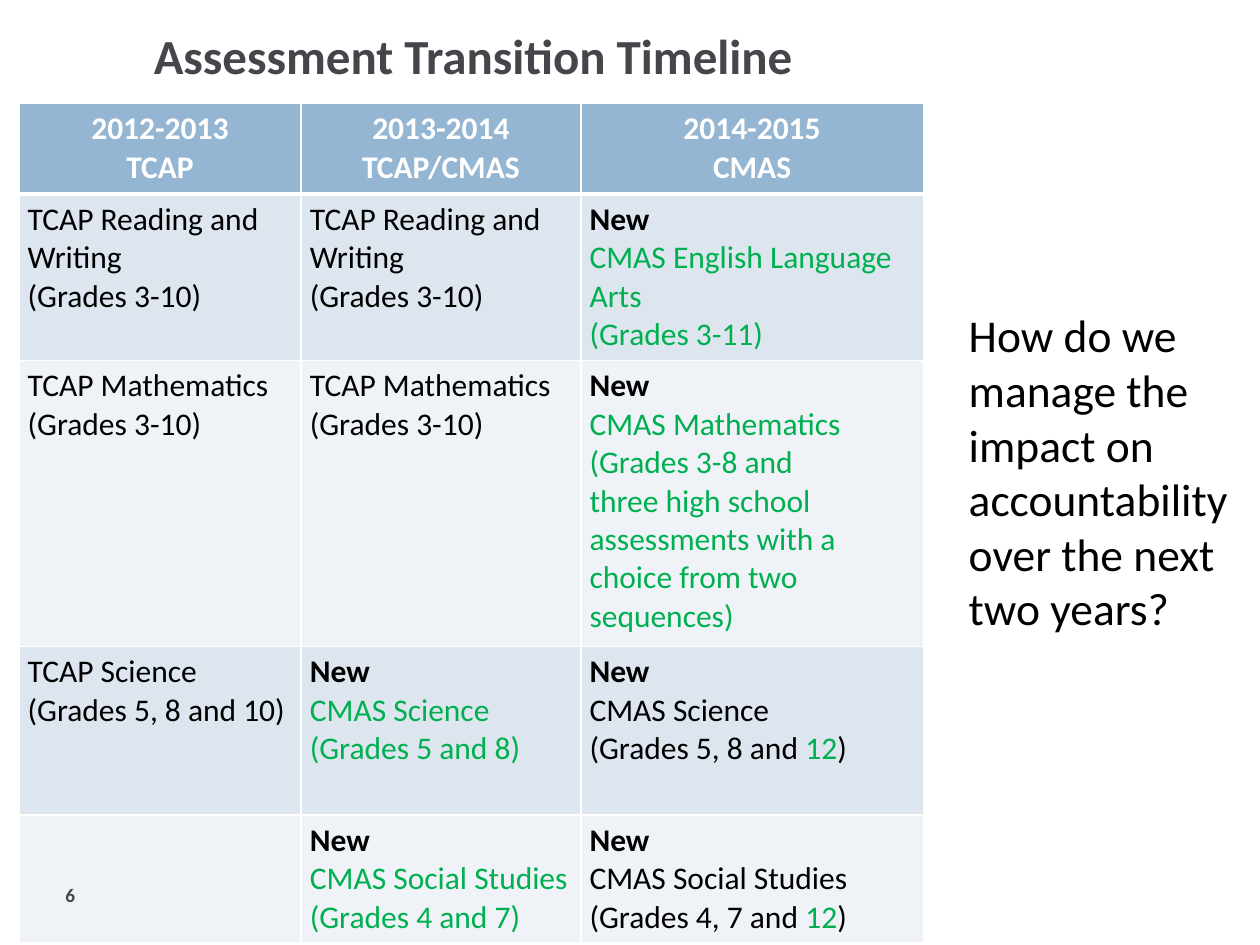
import pptx
import pptx.util
import pptx.dml.color
import pptx.enum.text
import pptx.oxml
import pptx.oxml.ns

ALIGN = pptx.enum.text.PP_ALIGN
ANCHOR = pptx.enum.text.MSO_ANCHOR
BLACK, WHITE, GREEN, CHARCOAL = "000000", "FFFFFF", "00B050", "45454C"
HEADER_FILL, BAND_FILLS = "95B6D2", ("DDE5EE", "EFF3F7")


def rgb(value):
    return pptx.dml.color.RGBColor.from_string(value)


def write(frame, lines, size=18, color=BLACK, bold=False, align=ALIGN.LEFT):
    frame.word_wrap = True
    for index, line in enumerate(lines):
        paragraph = frame.add_paragraph() if index else frame.paragraphs[0]
        paragraph.alignment = align
        pieces = [(line, {})] if isinstance(line, str) else line
        for words, changes in pieces:
            look = {"color": color, "bold": bold, **changes}
            run = paragraph.add_run()
            run.text = words
            run.font.name = "Calibri"
            run.font.size = pptx.util.Pt(size)
            run.font.bold = look["bold"]
            run.font.color.rgb = rgb(look["color"])


def new(*lines):
    return [[("New", {"bold": True})], *lines]


def green(*lines):
    return [[(line, {"color": GREEN})] for line in lines]


def grade_12(start):
    return [(start, {}), ("12", {"color": GREEN}), (")", {})]


class Deck:
    COLUMNS, ROWS = 100, 75

    def __init__(self, width, height):
        self.presentation = pptx.Presentation()
        self.presentation.slide_width = pptx.util.Inches(width)
        self.presentation.slide_height = pptx.util.Inches(height)
        self.slide = self.presentation.slides.add_slide(self.presentation.slide_layouts[6])

    def across(self, columns):
        return round(self.presentation.slide_width * columns / self.COLUMNS)

    def down(self, rows):
        return round(self.presentation.slide_height * rows / self.ROWS)

    def place(self, left, top, width, height):
        return self.across(left), self.down(top), self.across(width), self.down(height)

    def text(self, box, lines, anchor=ANCHOR.MIDDLE, top_inset=0.5, **style):
        frame = self.slide.shapes.add_textbox(*self.place(*box)).text_frame
        frame.vertical_anchor = anchor
        frame.margin_top = self.down(top_inset)
        write(frame, lines, **style)

    def border(self, cell, widths):
        properties = cell._tc.get_or_add_tcPr()
        for side, points in zip("LRTB", widths):
            properties.append(pptx.oxml.parse_xml(
                f'<a:ln{side} {pptx.oxml.ns.nsdecls("a")} w="{pptx.util.Pt(points)}">'
                f'<a:solidFill><a:srgbClr val="{WHITE}"/></a:solidFill></a:ln{side}>'))

    def table(self, left, top, widths, heights, content):
        box = self.place(left, top, sum(widths), sum(heights))
        grid = self.slide.shapes.add_table(len(heights), len(widths), *box).table
        for column, width in zip(grid.columns, widths):
            column.width = self.across(width)
        for row, height in zip(grid.rows, heights):
            row.height = self.down(height)
        for r, entries in enumerate(content):
            for c, lines in enumerate(entries):
                cell = grid.cell(r, c)
                self.border(cell, (1, 1, 3 if r == 1 else 1, 3 if r == 0 else 1))
                cell.margin_left = cell.margin_right = self.across(0.7)
                cell.margin_top = cell.margin_bottom = self.down(0.5)
                cell.fill.solid()
                if r == 0:
                    cell.fill.fore_color.rgb = rgb(HEADER_FILL)
                    write(cell.text_frame, lines, color=WHITE, bold=True, align=ALIGN.CENTER)
                else:
                    cell.fill.fore_color.rgb = rgb(BAND_FILLS[(r - 1) % 2])
                    write(cell.text_frame, lines)


def main():
    deck = Deck(10, 7.5)
    reading = ["TCAP Reading and Writing", "(Grades 3-10)"]
    mathematics = ["TCAP Mathematics", "(Grades 3-10)"]
    timeline = [
        [["2012-2013", "TCAP"], ["2013-2014", "TCAP/CMAS"], ["2014-2015", "CMAS"]],
        [reading, reading, new(*green("CMAS English Language Arts", "(Grades 3-11)"))],
        [mathematics, mathematics, new(*green(
            "CMAS Mathematics", "(Grades 3-8 and",
            "three high school assessments with a choice from two sequences)"))],
        [["TCAP Science", "(Grades 5, 8 and 10)"],
         new(*green("CMAS Science", "(Grades 5 and 8)")),
         new("CMAS Science", grade_12("(Grades 5, 8 and "))],
        [[], new(*green("CMAS Social Studies", "(Grades 4 and 7)")),
         new("CMAS Social Studies", grade_12("(Grades 4, 7 and "))],
    ]
    deck.table(1.5, 8.2, (22.4, 22.2, 27.2), (7.2, 13.2, 22.7, 13.4, 10), timeline)
    deck.text((75.9, 24.4, 23.3, 30.8),
              ["How do we manage the impact on accountability over the next two years?"],
              anchor=ANCHOR.TOP, top_inset=0, size=26)
    deck.text((4.2, 69.5, 36.7, 3), ["6"], size=11, color=CHARCOAL, bold=True)
    deck.text((4.2, 0, 66.7, 8.7), ["Assessment Transition Timeline"],
              size=28, color=CHARCOAL, bold=True, align=ALIGN.CENTER)
    deck.presentation.save("out.pptx")


if __name__ == "__main__":
    main()
